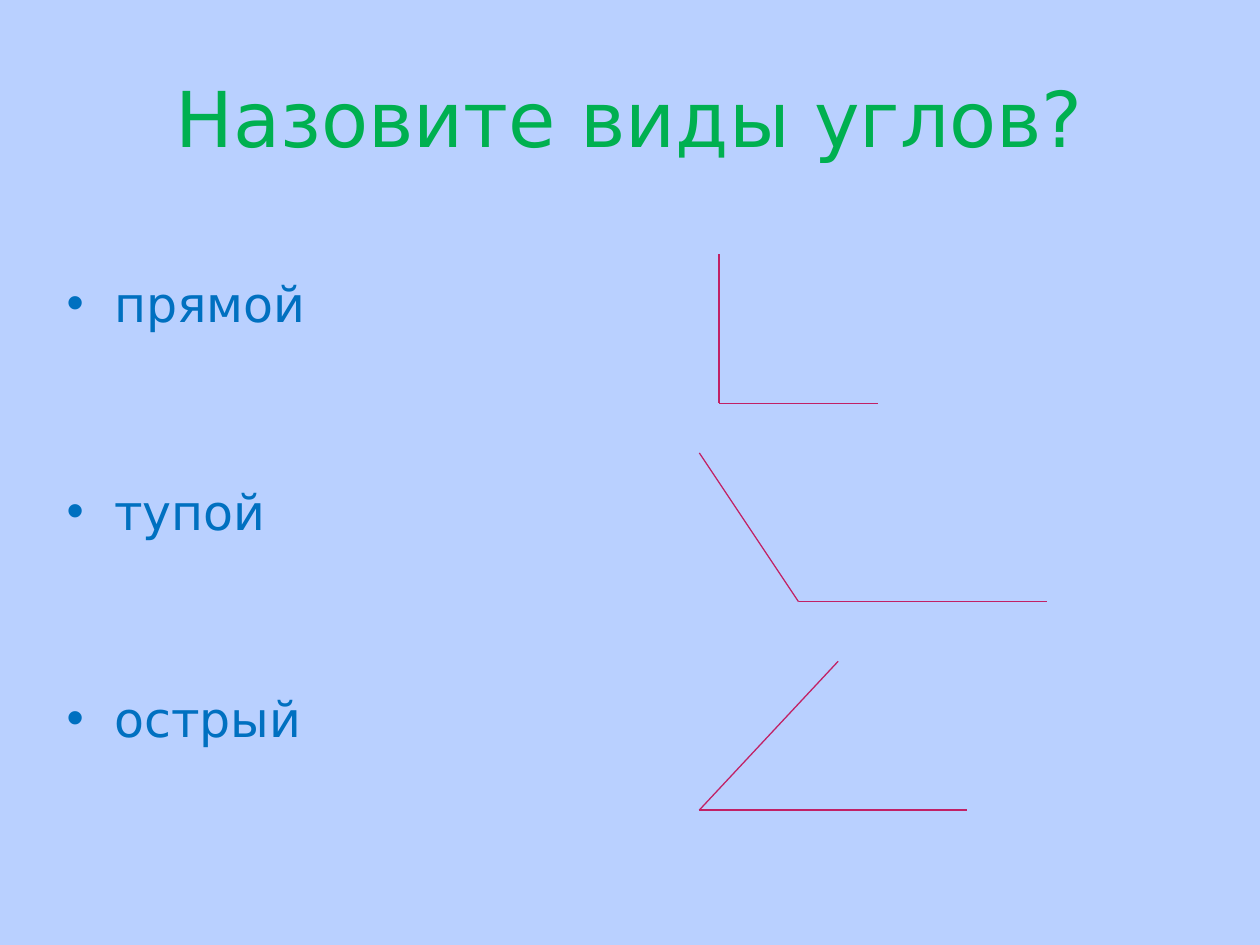
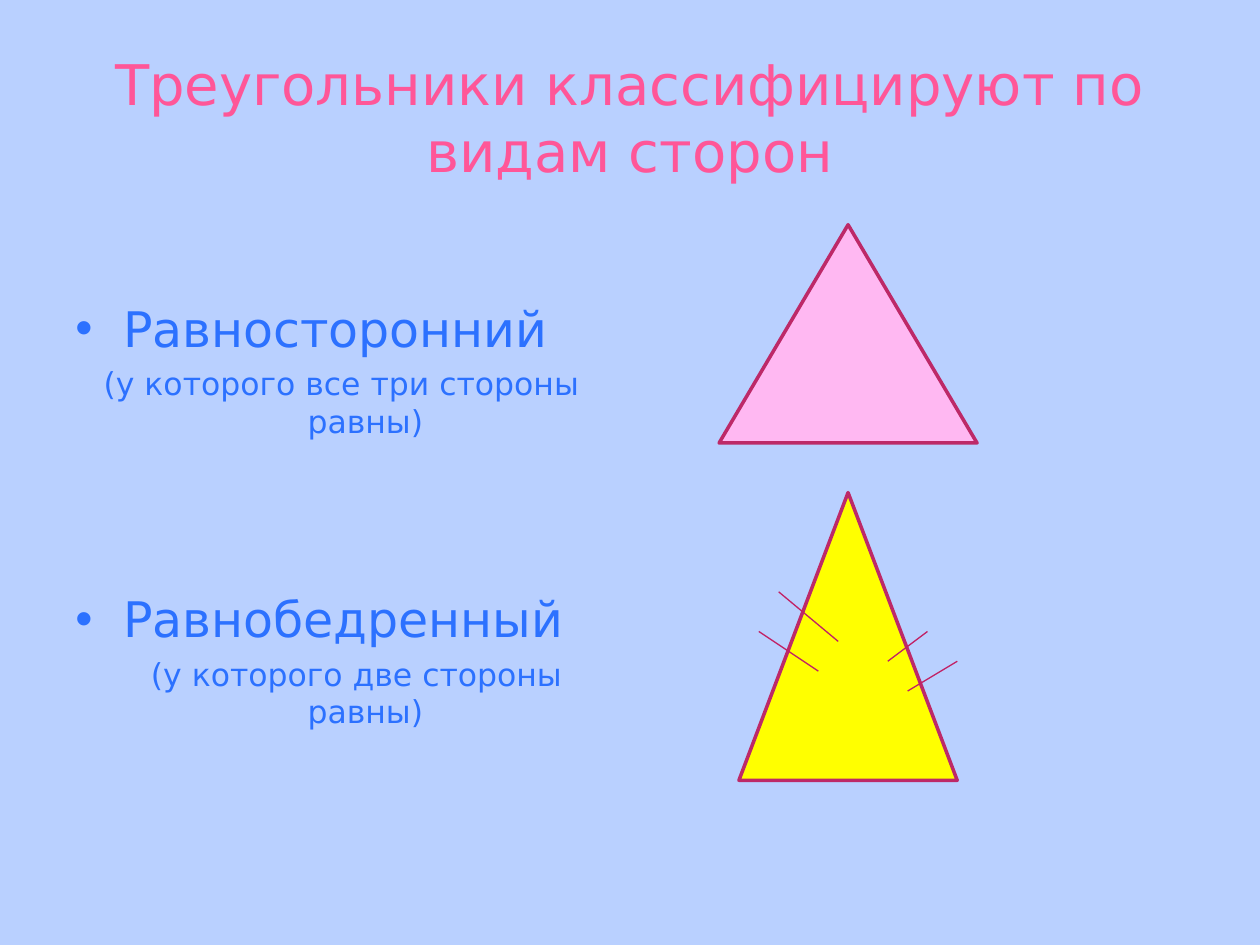
from dataclasses import dataclass

from lxml import etree
from pptx import Presentation
from pptx import util as u
from pptx.dml.color import RGBColor
from pptx.enum import shapes, text
from pptx.oxml import ns

FONT = "DejaVu Sans"
COLORS = {
    "background": "B9D0FF",
    "green": "00B050",
    "blue": "0070C0",
    "pink": "FF5698",
    "bright_blue": "2C71FF",
    "ray": "C12165",
    "outline": "BD2968",
    "rose": "FFB8F2",
    "yellow": "FFFF00",
}

# Drawing grid: 2 mm cells, counted from the left top corner of the drawings
CELL = u.Mm(2)
GRID_LEFT, GRID_TOP = u.Inches(5.55), u.Inches(2.02)

INDENT = 0.38
ITEM_GAP = 85  # points between the groups of the list


@dataclass
class Item:
    term: str
    note: str = ""
    note_shift: float = 0  # extra first-line indent of the note, inches


@dataclass
class Segment:
    start: tuple[float, float]
    end: tuple[float, float]


@dataclass
class Triangle:
    col: float
    row: float
    cols: float
    rows: float
    fill: str


def rgb(name: str) -> RGBColor:
    return RGBColor.from_string(COLORS[name])


def grid_x(col: float) -> int:
    return int(GRID_LEFT + col * CELL)


def grid_y(row: float) -> int:
    return int(GRID_TOP + row * CELL)


def add_run(p, words: str, size: float, color: str) -> None:
    r = p.add_run()
    r.text = words
    r.font.size, r.font.name = u.Pt(size), FONT
    r.font.color.rgb = rgb(color)


def add_titled_slide(prs, title: str, size: float, color: str):
    s = prs.slides.add_slide(prs.slide_layouts[5])
    sp = s.shapes.title
    sp.left, sp.top = int(prs.slide_width * 0.05), int(prs.slide_height * 0.04)
    sp.width, sp.height = int(prs.slide_width * 0.9), u.Inches(1.25)
    tf = sp.text_frame
    tf.auto_size = text.MSO_AUTO_SIZE.NONE
    tf.vertical_anchor = text.MSO_ANCHOR.MIDDLE
    p = tf.paragraphs[0]
    p.alignment = text.PP_ALIGN.CENTER
    add_run(p, title, size, color)
    return s


def set_indent(p, first_line: float, bullet: str = "") -> None:
    pPr = p._p.get_or_add_pPr()
    pPr.set("marL", str(u.Inches(INDENT)))
    pPr.set("indent", str(u.Inches(first_line)))
    if bullet:
        etree.SubElement(pPr, ns.qn("a:buFont")).set("typeface", "Arial")
        etree.SubElement(pPr, ns.qn("a:buChar")).set("char", bullet)
    else:
        etree.SubElement(pPr, ns.qn("a:buNone"))


def add_list(s, items: list[Item], color: str, left: float, top: float,
             width: float, height: float) -> None:
    box = s.shapes.add_textbox(*map(u.Inches, (left, top, width, height)))
    tf = box.text_frame
    tf.word_wrap = True
    tf.margin_top = u.Inches(0.62)
    for i, item in enumerate(items):
        p = tf.add_paragraph() if i else tf.paragraphs[0]
        set_indent(p, -INDENT, "•")
        if i:
            p.space_before = u.Pt(ITEM_GAP)
        add_run(p, item.term, 28, color)
        if item.note:
            p = tf.add_paragraph()
            set_indent(p, item.note_shift - INDENT)
            p.alignment = text.PP_ALIGN.CENTER
            p.space_before = u.Pt(4)
            add_run(p, item.note, 18, color)


def add_segment(s, seg: Segment) -> None:
    (x1, y1), (x2, y2) = seg.start, seg.end
    line = s.shapes.add_connector(shapes.MSO_CONNECTOR.STRAIGHT,
                                  grid_x(x1), grid_y(y1), grid_x(x2), grid_y(y2))
    line.line.color.rgb = rgb("ray")
    line.line.width = u.Pt(0.75)
    etree.SubElement(line._element.spPr, ns.qn("a:effectLst"))


def add_triangle(s, t: Triangle) -> None:
    sp = s.shapes.add_shape(shapes.MSO_SHAPE.ISOSCELES_TRIANGLE,
                            grid_x(t.col), grid_y(t.row),
                            int(t.cols * CELL), int(t.rows * CELL))
    sp.shadow.inherit = False
    sp.fill.solid()
    sp.fill.fore_color.rgb = rgb(t.fill)
    sp.line.color.rgb = rgb("outline")
    sp.line.width = u.Pt(2)


def build_angles(prs) -> None:
    s = add_titled_slide(prs, "Назовите виды углов?", 44, "green")
    add_list(s, [Item("прямой"), Item("тупой"), Item("острый")], "blue",
             0.43, 1.55, 4.48, 5.15)
    # Each angle: end of one ray, vertex, end of the other ray
    angles = [
        ((2, 0), (2, 15), (18, 15)),
        ((0, 20), (10, 35), (35, 35)),
        ((14, 41), (0, 56), (27, 56)),
    ]
    for first, vertex, second in angles:
        add_segment(s, Segment(first, vertex))
        add_segment(s, Segment(vertex, second))


def build_triangles(prs) -> None:
    s = add_titled_slide(prs, "Треугольники классифицируют по видам сторон",
                         32, "pink")
    add_list(s, [
        Item("Равносторонний", "(у которого все три стороны равны)"),
        Item("Равнобедренный", "(у которого две стороны равны)", 0.24),
    ], "bright_blue", 0.5, 1.75, 4.42, 4.95)
    for triangle in (Triangle(2, -3, 26, 22, "rose"),
                     Triangle(4, 24, 22, 29, "yellow")):
        add_triangle(s, triangle)
    # Marks of the equal sides
    for mark in (Segment((8, 34), (14, 39)), Segment((6, 38), (12, 42)),
                 Segment((23, 38), (19, 41)), Segment((26, 41), (21, 44))):
        add_segment(s, mark)


def main() -> None:
    prs = Presentation()
    prs.slide_width, prs.slide_height = u.Inches(10), u.Inches(7.5)
    # Shared background
    fill = prs.slide_master.background.fill
    fill.solid()
    fill.fore_color.rgb = rgb("background")
    build_angles(prs)
    build_triangles(prs)
    prs.save("out.pptx")


if __name__ == "__main__":
    main()
